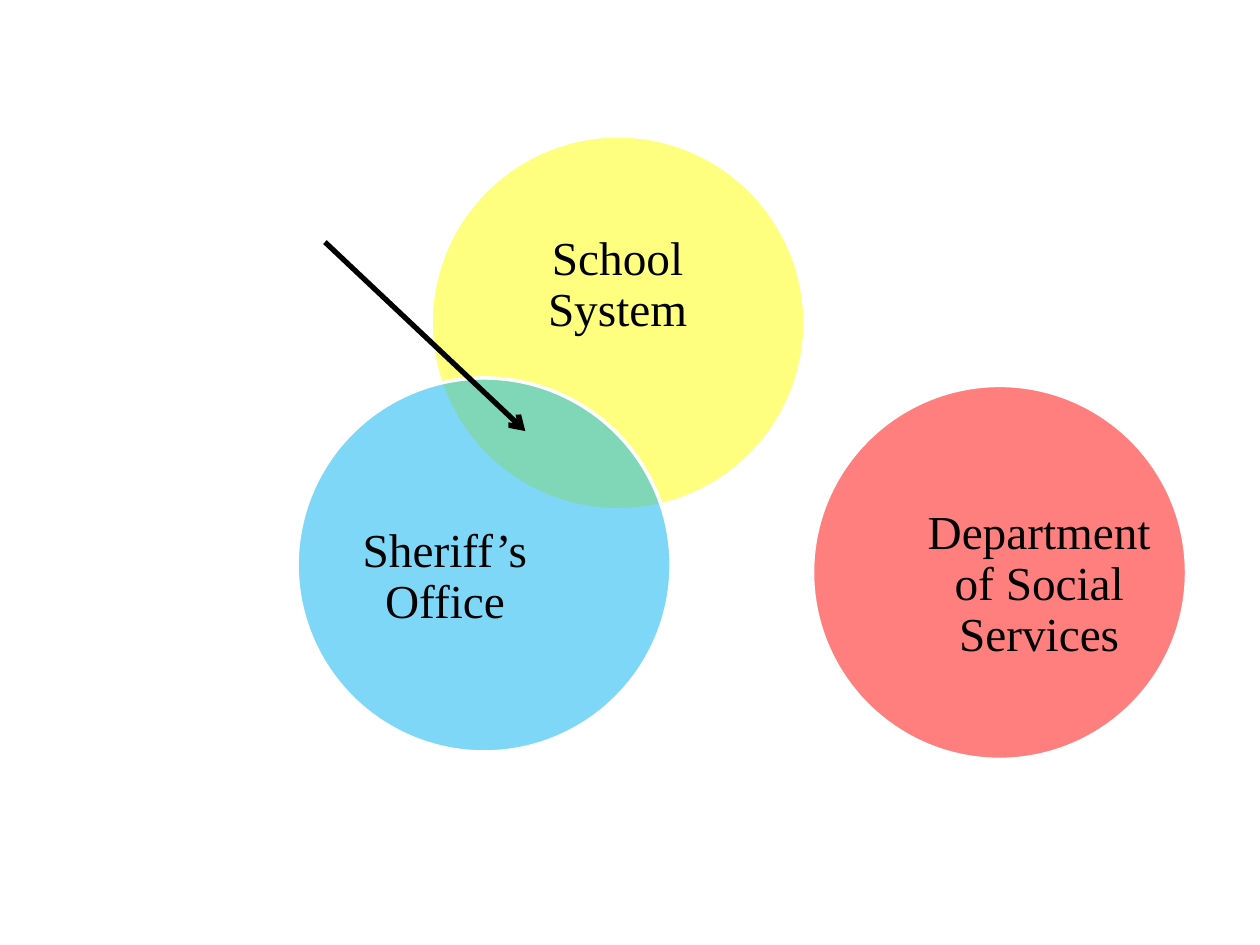
from lxml import etree
from pptx import Presentation
from pptx.dml.color import RGBColor
from pptx.enum import shapes, text
from pptx.oxml import ns
from pptx.util import Cm, Pt

COLORS = {
    "school": "FFFF00",
    "services": "FF0000",
    "sheriff": "00B0F0",
    "outline": "FFFFFF",
    "ink": "000000",
}
FONT = "Times New Roman"
DIAMETER = 7.54

# Colour key, circle corner, label, label box (left, top, width, height) in cm
AGENCIES = [
    ("school", (8.69, 2.74), "School System", (9.68, 4.06, 5.54, 3.4)),
    ("services", (16.38, 7.77), "Department of Social Services",
     (18.69, 9.73, 4.52, 4.14)),
    ("sheriff", (5.99, 7.62), "Sheriff’s Office", (6.71, 9.58, 4.52, 4.14)),
]


def color(name):
    return RGBColor.from_string(COLORS[name])


def add_circle(page, left, top, fill):
    circle = page.shapes.add_shape(shapes.MSO_SHAPE.OVAL, Cm(left), Cm(top),
                                   Cm(DIAMETER), Cm(DIAMETER))
    circle.shadow.inherit = False
    circle.fill.solid()
    circle.fill.fore_color.rgb = color(fill)
    circle.line.color.rgb = color("outline")
    circle.line.width = Pt(2)
    # Half transparency, so that overlaps show
    tint = circle._element.spPr.find(ns.qn("a:solidFill"))[0]
    etree.SubElement(tint, ns.qn("a:alpha"), val="50000")


def add_label(page, wording, bounds):
    box = page.shapes.add_textbox(*map(Cm, bounds))
    frame = box.text_frame
    frame.word_wrap = True
    frame.vertical_anchor = text.MSO_ANCHOR.MIDDLE
    frame.margin_left = frame.margin_right = 0
    frame.margin_top = frame.margin_bottom = 0
    para = frame.paragraphs[0]
    para.text = wording
    para.alignment = text.PP_ALIGN.CENTER
    para.line_spacing = 0.9
    para.font.name = FONT
    para.font.size = Pt(27)
    para.font.color.rgb = color("ink")


def add_arrow(page, start, end):
    arrow = page.shapes.add_connector(shapes.MSO_CONNECTOR.STRAIGHT,
                                      *map(Cm, start + end))
    arrow.line.color.rgb = color("ink")
    arrow.line.width = Pt(3)
    etree.SubElement(arrow.line._get_or_add_ln(), ns.qn("a:tailEnd"),
                     type="arrow")
    etree.SubElement(arrow._element.spPr, ns.qn("a:effectLst"))


def main():
    deck = Presentation()
    deck.slide_width, deck.slide_height = Cm(25.4), Cm(19.05)
    page = deck.slides.add_slide(deck.slide_layouts[6])

    # Agencies
    for fill, corner, wording, bounds in AGENCIES:
        add_circle(page, *corner, fill)
        add_label(page, wording, bounds)

    # Pointer to the overlap
    add_arrow(page, (6.55, 4.88), (10.59, 8.69))

    deck.save("out.pptx")


if __name__ == "__main__":
    main()
